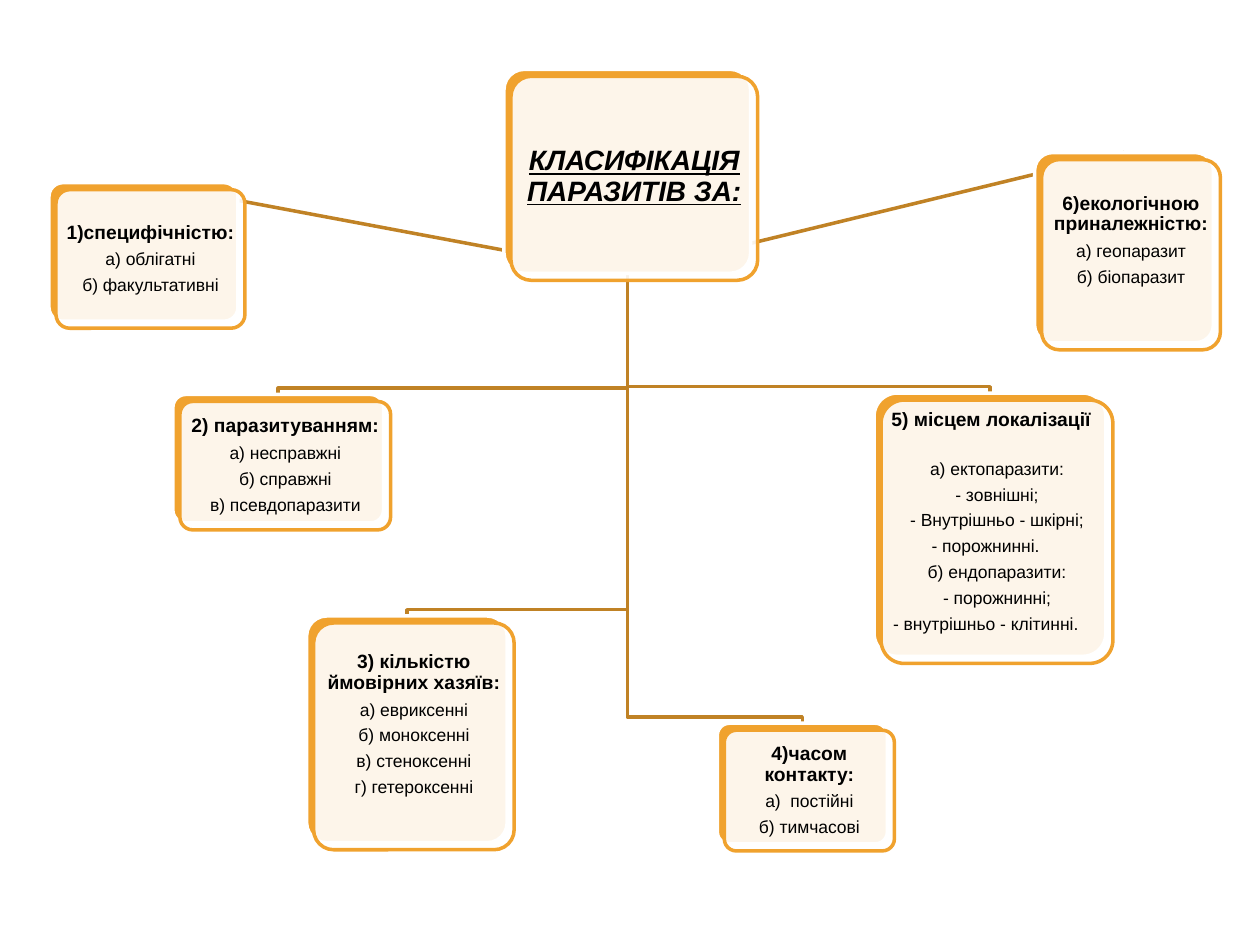
from lxml.etree import SubElement
from pptx import Presentation
from pptx.dml.color import RGBColor
from pptx.enum.shapes import MSO_CONNECTOR, MSO_SHAPE
from pptx.enum.text import MSO_ANCHOR, PP_ALIGN
from pptx.oxml.ns import qn
from pptx.util import Pt

AMBER, BROWN, WHITE, BLACK = "F0A22E", "C08225", "FFFFFF", "000000"
SHIFT = 4
STUB = 3.6

TITLE = "КЛАСИФІКАЦІЯ ПАРАЗИТІВ ЗА:"
HOST = (288, 39.6, 141, 116.6)
SIDES = [
    ((28, 104.4, 108, 79.2), 3.6,
     ["1)специфічністю:", "а) облігатні", "б) факультативні"]),
    ((591.2, 87.2, 102.2, 108.7), 20,
     ["6)екологічною приналежністю:", "а) геопаразит", "б) біопаразит"]),
]
BELOW = [
    ((98.8, 225.4, 120.4, 73.4), 3.6,
     ["2) паразитуванням:", "а) несправжні", "б) справжні",
      "в) псевдопаразити"]),
    ((175.2, 352, 114.6, 129.6), 17,
     ["3) кількістю ймовірних хазяїв:", "а) евриксенні", "б) моноксенні",
      "в) стеноксенні", "г) гетероксенні"]),
    ((409.9, 413.3, 97.2, 69), 3.6,
     ["4)часом контакту:", "а)  постійні", "б) тимчасові"]),
]
PLACE = ((499.5, 224.6, 132.5, 150.5), 15,
         ["5) місцем локалізації", "а) ектопаразити:", "- зовнішні;",
          "- Внутрішньо - шкірні;", "- порожнинні.", "б) ендопаразити:",
          "- порожнинні;", "- внутрішньо - клітинні."])


def tint(text):
    return RGBColor.from_string(text)


def stroke(item, color):
    item.line.color.rgb = tint(color)
    item.line.width = Pt(2)


def panel(slide, box, fill, edge):
    item = slide.shapes.add_shape(MSO_SHAPE.ROUNDED_RECTANGLE, *map(Pt, box))
    item.adjustments[0] = 0.1
    item.shadow.inherit = False
    item.fill.solid()
    item.fill.fore_color.rgb = tint(fill)
    stroke(item, edge)
    return item


def style(par, size, bold):
    par.alignment = PP_ALIGN.CENTER
    par.line_spacing = 0.9
    par.space_after = Pt(0.39 * size)
    for run in par.runs:
        run.font.name = "Arial"
        run.font.size = Pt(size)
        run.font.bold = bold
        run.font.color.rgb = tint(BLACK)


def card(slide, box, foot, lines, head=11):
    back = panel(slide, box, AMBER, WHITE)
    left, top, wide, high = box
    front = panel(slide, (left + SHIFT, top + SHIFT, wide, high), WHITE, AMBER)
    color = front.fill._xPr.find(".//" + qn("a:srgbClr"))
    SubElement(color, qn("a:alpha"), val="90000")
    frame = front.text_frame
    frame.word_wrap = True
    frame.vertical_anchor = MSO_ANCHOR.MIDDLE
    frame.margin_left = frame.margin_right = Pt(2)
    frame.margin_top, frame.margin_bottom = Pt(3.6), Pt(foot)
    frame.text = "\n".join(lines)
    for row, par in enumerate(frame.paragraphs):
        style(par, 10 if row else head, row == 0)
    return back, frame


def indent(par, left):
    par.alignment = PP_ALIGN.LEFT
    par._p.get_or_add_pPr().set("marL", str(Pt(left)))


def elbow(slide, start, box):
    x, y = start
    end, top = box[0] + box[2] / 2, box[1]
    bar = top - STUB
    path = slide.shapes.build_freeform(Pt(x), Pt(y))
    path.add_line_segments(
        [(Pt(a), Pt(b)) for a, b in [(x, bar), (end, bar), (end, top)]],
        close=False)
    item = path.convert_to_shape()
    item.shadow.inherit = False
    item.fill.background()
    stroke(item, BROWN)


def link(slide, host, leaf):
    line = slide.shapes.add_connector(MSO_CONNECTOR.STRAIGHT, 0, 0, 0, 0)
    line.begin_connect(host, 2)
    line.end_connect(leaf, 0)
    stroke(line, BROWN)
    SubElement(line._element.spPr, qn("a:effectLst"))
    slide.shapes._spTree.insert(2, line._element)


def main():
    deck = Presentation()
    deck.slide_width, deck.slide_height = Pt(720), Pt(540)
    slide = deck.slides.add_slide(deck.slide_layouts[6])

    start = HOST[0] + HOST[2] / 2, HOST[1] + HOST[3]
    for box, *_ in BELOW + [PLACE]:
        elbow(slide, start, box)

    host, frame = card(slide, HOST, 5, [TITLE], 16)
    font = frame.paragraphs[0].runs[0].font
    font.italic = font.underline = True

    for part in SIDES:
        leaf, _ = card(slide, *part)
        link(slide, host, leaf)
    for part in BELOW:
        card(slide, *part)

    _, frame = card(slide, *PLACE)
    pars = frame.paragraphs
    pars[0].space_after = Pt(17)
    for row, left in [(0, 0), (4, 23), (7, 1)]:
        indent(pars[row], left)

    deck.save("out.pptx")


if __name__ == "__main__":
    main()
